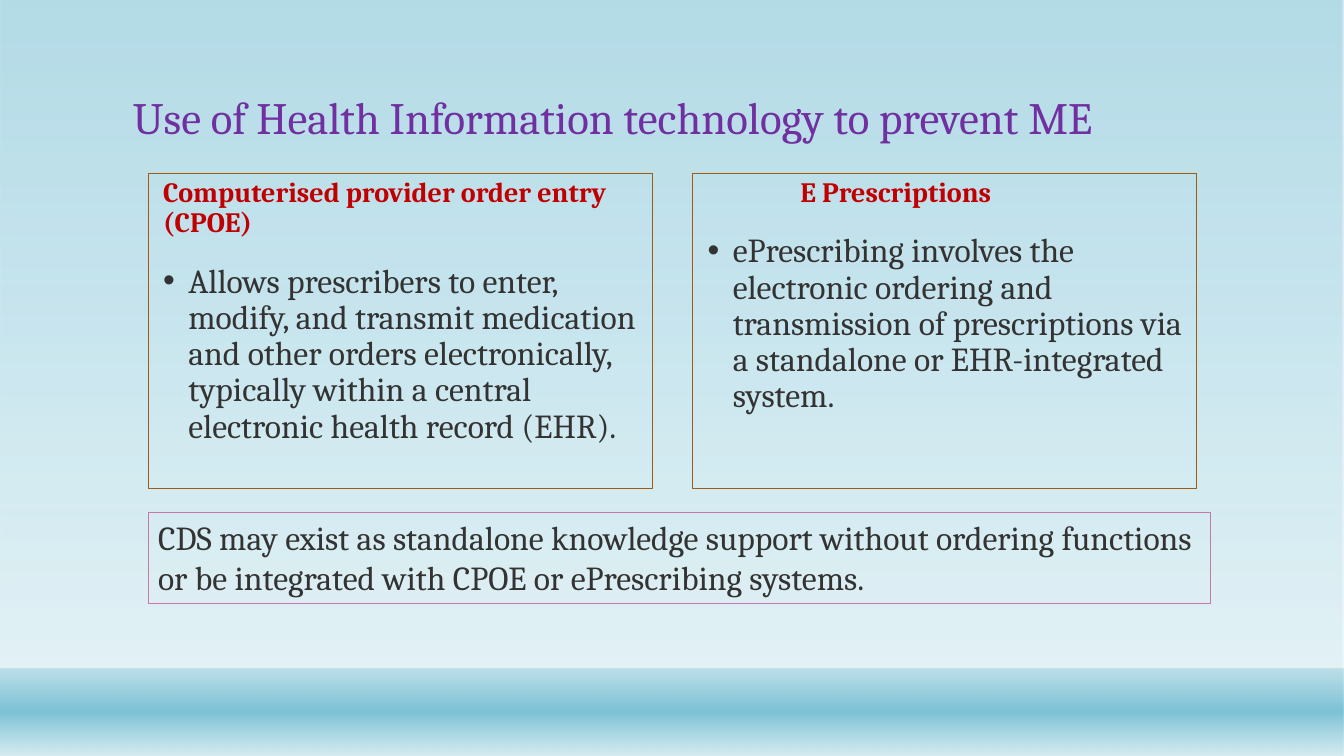
from lxml.etree import SubElement
from pptx import Presentation
from pptx.dml.color import RGBColor
from pptx.enum.shapes import MSO_SHAPE
from pptx.enum.text import MSO_ANCHOR, PP_ALIGN
from pptx.oxml.ns import qn
from pptx.util import Inches, Pt

WIDTH, HEIGHT = 13.33, 7.5
BAND_TOP = 6.63
PANEL_LEFT, PANEL_TOP = 1.47, 1.72
PANEL_WIDTH, PANEL_HEIGHT, PANEL_GAP = 5, 3.13, 0.4
FONT = "Cambria"
PURPLE, RED, DARK = "7030A0", "C00000", "333333"
BROWN, PINK = "A25A12", "C877A8"
TEAL, PALE = "7DC2D6", "D4EBF1"

PANELS = [
    ("Computerised provider order entry (CPOE)", 0.05,
     "Allows prescribers to enter, modify, and transmit medication and other "
     "orders electronically, typically within a central electronic health "
     "record (EHR)."),
    ("E Prescriptions", 0.97,
     "ePrescribing involves the electronic ordering and transmission of "
     "prescriptions via a standalone or EHR-integrated system."),
]


def color(hex_string):
    return RGBColor.from_string(hex_string)


def add_rectangle(slide, left, top, width, height):
    shape = slide.shapes.add_shape(
        MSO_SHAPE.RECTANGLE, Inches(left), Inches(top), Inches(width), Inches(height))
    shape.shadow.inherit = False
    return shape


def add_gradient(slide, top, height, stops):
    """Add a full-width vertical gradient; stops are (position %, colour, opacity %)."""
    shape = add_rectangle(slide, 0, top, WIDTH, height)
    shape.line.fill.background()
    shape.fill.gradient()
    shape.fill.gradient_angle = 270
    stop_list = shape.fill._fill._gradFill.find(qn("a:gsLst"))
    for default_stop in list(stop_list):
        stop_list.remove(default_stop)
    for position, hex_string, opacity in stops:
        stop = SubElement(stop_list, qn("a:gs"), pos=str(position * 1000))
        stop_color = SubElement(stop, qn("a:srgbClr"), val=hex_string)
        SubElement(stop_color, qn("a:alpha"), val=str(opacity * 1000))


def add_frame(slide, left, top, width, height, line_color):
    """Add an outlined, unfilled box and return its text frame."""
    shape = add_rectangle(slide, left, top, width, height)
    shape.fill.background()
    shape.line.color.rgb = color(line_color)
    shape.line.width = Pt(0.75)
    frame = shape.text_frame
    frame.word_wrap = True
    frame.vertical_anchor = MSO_ANCHOR.TOP
    return frame


def write(paragraph, text, size, hex_string, bold=False, spacing=None,
          indent=0, bullet=False):
    paragraph.text = text
    paragraph.alignment = PP_ALIGN.LEFT
    paragraph.line_spacing = spacing
    properties = paragraph._p.get_or_add_pPr()
    properties.set("marL", str(Inches(indent)))
    if bullet:
        properties.set("indent", str(Inches(-0.25)))
        SubElement(properties, qn("a:buFont"), typeface="Arial")
        SubElement(properties, qn("a:buChar"), char="•")
    font = paragraph.font
    font.name, font.size, font.bold = FONT, Pt(size), bold
    font.color.rgb = color(hex_string)


def add_title(slide, text):
    box = slide.shapes.add_textbox(Inches(1.22), Inches(0.29), Inches(10.65), Inches(1.19))
    frame = box.text_frame
    frame.word_wrap = True
    frame.vertical_anchor = MSO_ANCHOR.BOTTOM
    write(frame.paragraphs[0], text, 32, PURPLE, spacing=0.9)


def add_panel(slide, column, heading, heading_indent, body):
    left = PANEL_LEFT + column * (PANEL_WIDTH + PANEL_GAP)
    frame = add_frame(slide, left, PANEL_TOP, PANEL_WIDTH, PANEL_HEIGHT, BROWN)
    write(frame.paragraphs[0], heading, 20, RED, bold=True, spacing=0.9,
          indent=heading_indent)
    paragraph = frame.add_paragraph()
    paragraph.space_before = Pt(18)
    write(paragraph, body, 24, DARK, spacing=0.9, indent=0.3, bullet=True)


def main():
    presentation = Presentation()
    presentation.slide_width = Inches(WIDTH)
    presentation.slide_height = Inches(HEIGHT)
    slide = presentation.slides.add_slide(presentation.slide_layouts[6])

    add_gradient(slide, 0, HEIGHT, [(0, TEAL, 58), (88, PALE, 65)])
    add_gradient(slide, BAND_TOP, HEIGHT - BAND_TOP,
                 [(1, TEAL, 38), (49, TEAL, 100), (100, PALE, 89)])
    add_title(slide, "Use of Health Information technology to prevent ME")
    for column, panel in enumerate(PANELS):
        add_panel(slide, column, *panel)
    note = add_frame(slide, PANEL_LEFT, 5.08, 10.54, 0.91, PINK)
    write(note.paragraphs[0],
          "CDS may exist as standalone knowledge support without ordering "
          "functions or be integrated with CPOE or ePrescribing systems.", 24, DARK)

    presentation.save("out.pptx")


if __name__ == "__main__":
    main()
